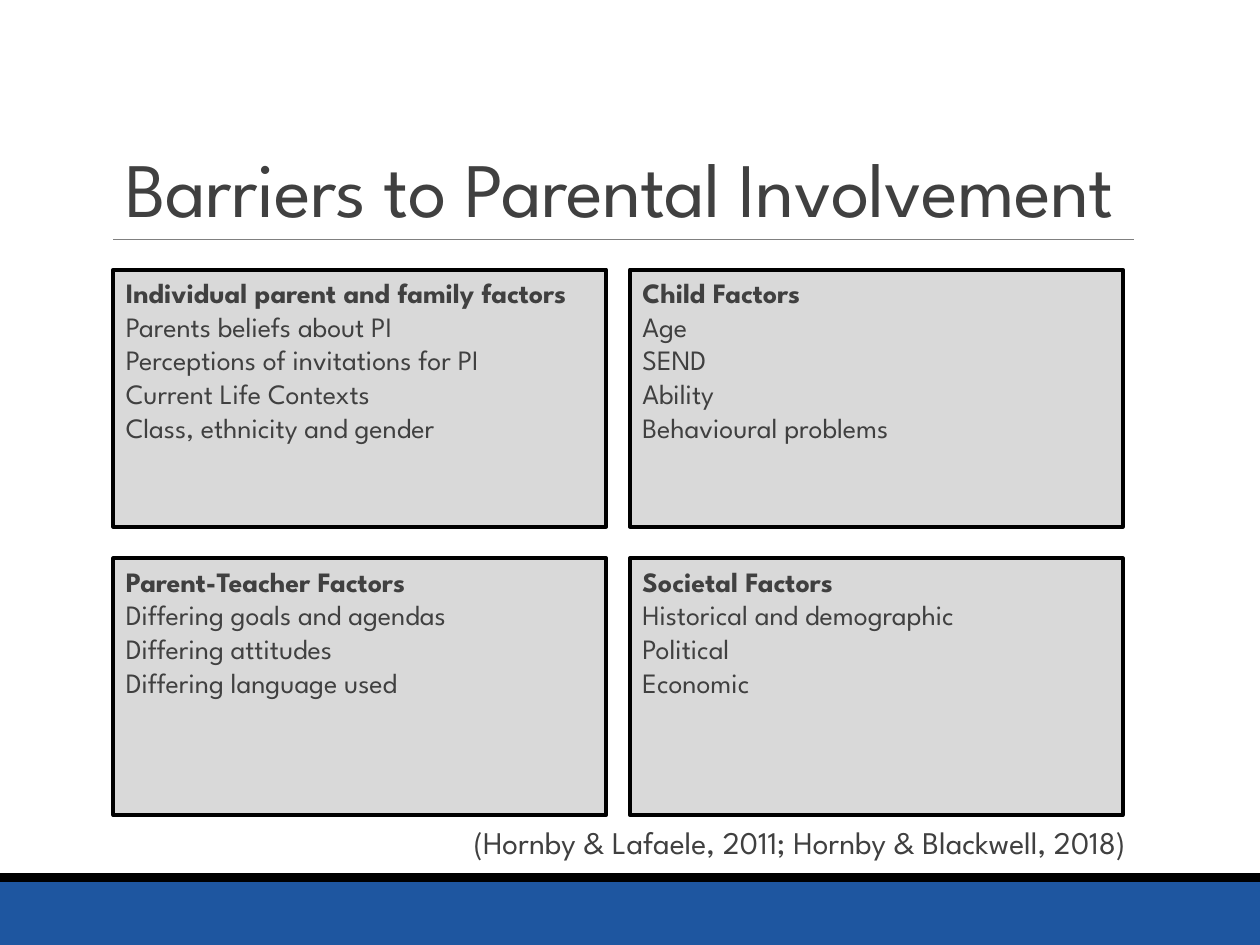
from pptx import Presentation
from pptx.dml.color import RGBColor
from pptx.enum.shapes import MSO_CONNECTOR, MSO_SHAPE
from pptx.enum.text import MSO_ANCHOR, PP_ALIGN
from pptx.oxml.ns import qn
from pptx.util import Inches, Pt
from lxml.etree import SubElement

BLUE = RGBColor(0x1E, 0x56, 0xA0)
BLACK = RGBColor(0x00, 0x00, 0x00)
GREY = RGBColor(0x80, 0x80, 0x80)
LIGHT_GREY = RGBColor(0xD9, 0xD9, 0xD9)
DARK_GREY = RGBColor(0x40, 0x40, 0x40)

# One row of cards per tuple: heading, then its factors
CARD_ROWS = [
    (
        ["Individual parent and family factors", "Parents beliefs about PI",
         "Perceptions of invitations for PI", "Current Life Contexts",
         "Class, ethnicity and gender"],
        ["Child Factors", "Age", "SEND", "Ability", "Behavioural problems"],
    ),
    (
        ["Parent-Teacher Factors", "Differing goals and agendas",
         "Differing attitudes", "Differing language used"],
        ["Societal Factors", "Historical and demographic", "Political", "Economic"],
    ),
]
CARD_LEFT, CARD_TOP = 0.9, 2.14
CARD_WIDTH, CARD_HEIGHT = 3.91, 2.04
COLUMN_STEP, ROW_STEP = 4.1, 2.29


class SlideBuilder:
    font_name = "League Spartan"

    def __init__(self, page):
        self.page = page

    def style(self, paragraph, size, bold=False):
        paragraph.alignment = PP_ALIGN.LEFT
        paragraph.font.name = self.font_name
        paragraph.font.size = Pt(size)
        paragraph.font.bold = bold
        paragraph.font.color.rgb = DARK_GREY

    def rectangle(self, left, top, width, height, fill):
        box = self.page.shapes.add_shape(
            MSO_SHAPE.RECTANGLE, Inches(left), Inches(top), Inches(width), Inches(height))
        box.shadow.inherit = False
        box.fill.solid()
        box.fill.fore_color.rgb = fill
        box.line.fill.background()
        return box

    def rule(self, left, right, top):
        line = self.page.shapes.add_connector(
            MSO_CONNECTOR.STRAIGHT, Inches(left), Inches(top), Inches(right), Inches(top))
        line.line.color.rgb = GREY
        line.line.width = Pt(0.5)
        SubElement(line._element.spPr, qn("a:effectLst"))

    def text(self, left, top, width, height, wording, size):
        box = self.page.shapes.add_textbox(
            Inches(left), Inches(top), Inches(width), Inches(height))
        box.text_frame.word_wrap = True
        paragraph = box.text_frame.paragraphs[0]
        paragraph.add_run().text = wording
        self.style(paragraph, size)
        return box.text_frame

    def title(self, left, top, width, height, wording):
        frame = self.text(left, top, width, height, wording, 44)
        frame.vertical_anchor = MSO_ANCHOR.BOTTOM
        paragraph = frame.paragraphs[0]
        paragraph.line_spacing = 0.85
        # Letter spacing in hundredths of a point
        paragraph.runs[0]._r.get_or_add_rPr().set("spc", "-40")

    def card(self, left, top, lines):
        box = self.rectangle(left, top, CARD_WIDTH, CARD_HEIGHT, LIGHT_GREY)
        box.line.color.rgb = BLACK
        box.line.width = Pt(2.25)
        frame = box.text_frame
        frame.word_wrap = True
        frame.vertical_anchor = MSO_ANCHOR.TOP
        frame.text = "\n".join(lines)
        for index, paragraph in enumerate(frame.paragraphs):
            self.style(paragraph, 16, bold=index == 0)


def main():
    deck = Presentation()
    deck.slide_width, deck.slide_height = Inches(10), Inches(7.5)
    builder = SlideBuilder(deck.slides.add_slide(deck.slide_layouts[6]))

    # Footer bands
    builder.rectangle(0, 7, 10, 0.5, BLUE)
    builder.rectangle(0, 6.93, 10, 0.07, BLACK)

    # Title and rule
    builder.rule(0.9, 9, 1.9)
    builder.title(0.9, 0.31, 8.25, 1.59, "Barriers to Parental Involvement")

    # Grid of factor cards
    for row, cards in enumerate(CARD_ROWS):
        for column, lines in enumerate(cards):
            builder.card(CARD_LEFT + column * COLUMN_STEP,
                         CARD_TOP + row * ROW_STEP, lines)

    # Citation
    builder.text(3.66, 6.48, 6.59, 0.4,
                 "(Hornby & Lafaele, 2011; Hornby & Blackwell, 2018)", 18)

    deck.save("out.pptx")


if __name__ == "__main__":
    main()
